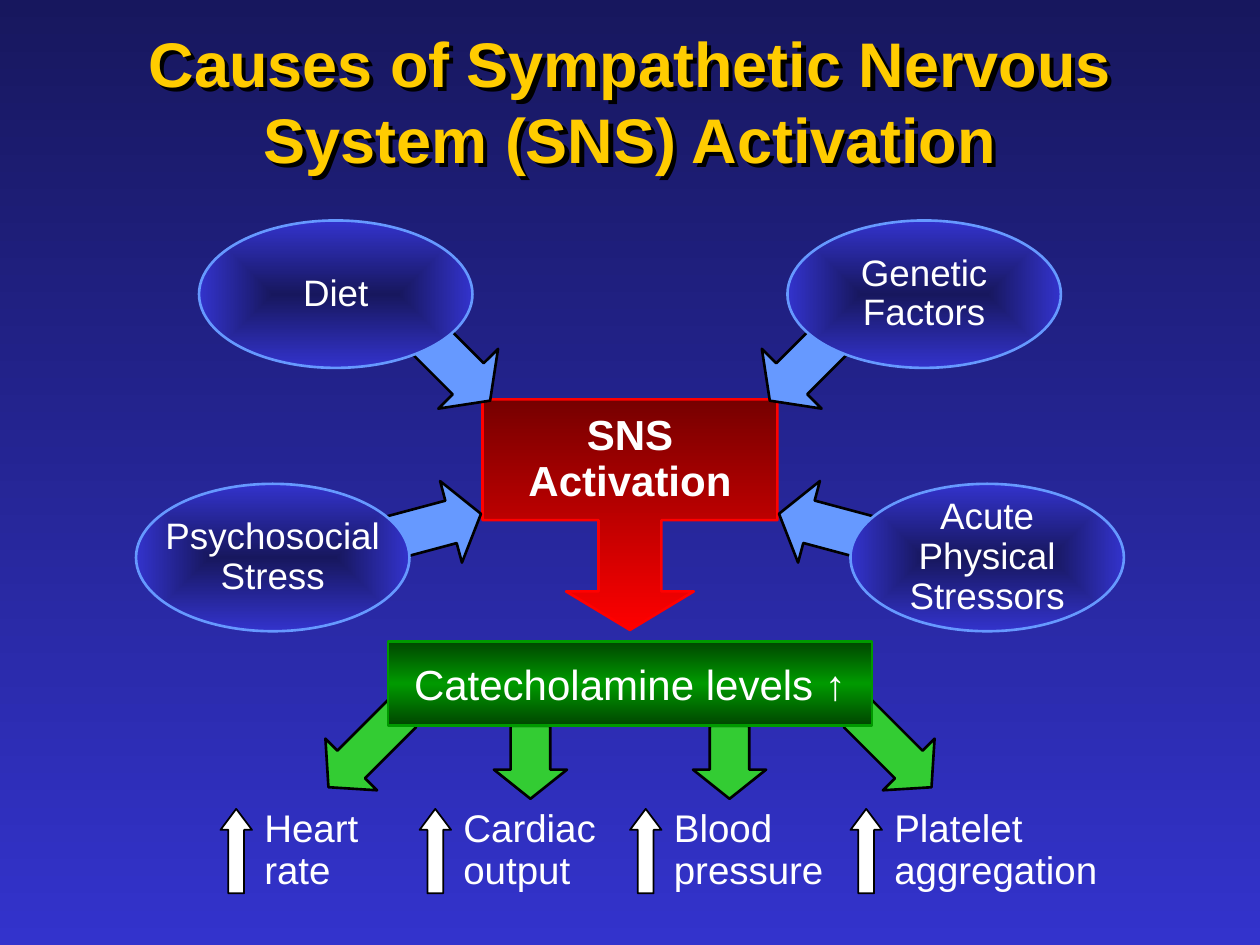
import lxml.etree
import pptx
import pptx.dml.color
import pptx.enum.shapes
import pptx.enum.text
import pptx.oxml.ns
import pptx.util

Inches = pptx.util.Inches
RGBColor = pptx.dml.color.RGBColor
SHAPE = pptx.enum.shapes.MSO_SHAPE
ALIGN = pptx.enum.text.PP_ALIGN
qn = pptx.oxml.ns.qn

NAVY = RGBColor(0x17, 0x17, 0x5E)
BLUE = RGBColor(0x33, 0x33, 0xCC)
SKY = RGBColor(0x66, 0x99, 0xFF)
GOLD = RGBColor(0xFF, 0xCC, 0x00)
MAROON = RGBColor(0x76, 0x00, 0x00)
RED = RGBColor(0xFF, 0x00, 0x00)
FOREST = RGBColor(0x00, 0x46, 0x00)
GREEN = RGBColor(0x00, 0x99, 0x00)
LIME = RGBColor(0x33, 0xCC, 0x33)
WHITE = RGBColor(0xFF, 0xFF, 0xFF)
BLACK = RGBColor(0x00, 0x00, 0x00)

TITLE_FORMAT = {"size": 36, "color": GOLD, "bold": True}
CALLOUT_FORMAT = {"size": 24, "bold": True, "spacing": 0.9}
CAUSE_FORMAT = {"size": 21, "spacing": 0.9}
LEVEL_FORMAT = {"size": 24}
EFFECT_FORMAT = {"size": 22, "spacing": 0.9, "alignment": ALIGN.LEFT}


def apply_gradient(fill, element, colors, from_center=False):
    """Fill with evenly spaced colours, top to bottom or outward from the centre."""
    fill.gradient()
    gradient = next(element.iter(qn("a:gradFill")))
    for child in list(gradient):
        gradient.remove(child)
    stops = lxml.etree.SubElement(gradient, qn("a:gsLst"))
    for index, color in enumerate(colors):
        position = 100000 * index // (len(colors) - 1)
        stop = lxml.etree.SubElement(stops, qn("a:gs"), pos=str(position))
        lxml.etree.SubElement(stop, qn("a:srgbClr"), val=str(color))
    if from_center:
        route = lxml.etree.SubElement(gradient, qn("a:path"), path="shape")
        sides = dict.fromkeys("ltrb", "50000")
        lxml.etree.SubElement(route, qn("a:fillToRect"), **sides)
    else:
        lxml.etree.SubElement(gradient, qn("a:lin"), ang="5400000", scaled="1")


def write_text(shape, lines, text_format, wrap=False):
    """Write one paragraph for each line, centred vertically in the shape."""
    frame = shape.text_frame
    frame.word_wrap = wrap
    frame.vertical_anchor = pptx.enum.text.MSO_ANCHOR.MIDDLE
    for index, line in enumerate(lines):
        paragraph = frame.add_paragraph() if index else frame.paragraphs[0]
        paragraph.alignment = text_format.get("alignment", ALIGN.CENTER)
        paragraph.line_spacing = text_format.get("spacing", 1.0)
        run = paragraph.add_run()
        run.text = line
        font_values = {
            "name": "Arial",
            "size": pptx.util.Pt(text_format["size"]),
            "bold": text_format.get("bold", False),
        }
        for name, value in font_values.items():
            setattr(run.font, name, value)
        run.font.color.rgb = text_format.get("color", WHITE)


def add_box(slide, kind, box, colors, line_color, line_width=1.5, adjustments=(), from_center=False):
    """Add an outlined preset shape with a plain or gradient fill."""
    shape = slide.shapes.add_shape(kind, *map(Inches, box))
    shape.shadow.inherit = False
    for index, value in enumerate(adjustments):
        shape.adjustments[index] = value
    if len(colors) == 1:
        shape.fill.solid()
        shape.fill.fore_color.rgb = colors[0]
    else:
        apply_gradient(shape.fill, shape._element, colors, from_center)
    shape.line.color.rgb = line_color
    shape.line.width = pptx.util.Pt(line_width)
    return shape


def add_arrow(slide, box, color, rotation, adjustments):
    """Add a black-edged block arrow, pointing down before rotation."""
    arrow = add_box(slide, SHAPE.DOWN_ARROW, box, [color], BLACK, adjustments=adjustments)
    arrow.rotation = rotation


def add_title(slide, box):
    """Add the gold title with a hard black shadow."""
    title = slide.shapes.add_textbox(*map(Inches, box))
    write_text(title, ["Causes of Sympathetic Nervous System (SNS) Activation"], TITLE_FORMAT, True)
    effects = lxml.etree.SubElement(title._element.spPr, qn("a:effectLst"))
    shadow = lxml.etree.SubElement(effects, qn("a:outerShdw"), dist="45000", dir="2700000")
    lxml.etree.SubElement(shadow, qn("a:srgbClr"), val=str(BLACK))


def add_activation(slide, box):
    """Add the red callout whose arrow leads down to the levels bar."""
    callout = add_box(slide, SHAPE.DOWN_ARROW_CALLOUT, box, [MAROON, RED], RED,
                      adjustments=(0.273, 0.277, 0.167, 0.524))
    write_text(callout, ["SNS", "Activation"], CALLOUT_FORMAT)


def add_causes(slide, box):
    """Add four ellipses with arrows aimed at the middle of the box."""
    left, top, width, height = box
    oval_width, oval_height = 2.17, 1.17
    upper, lower = top, top + height - oval_height
    right = left + width - oval_width
    causes = [
        (["Genetic", "Factors"], right - 0.5, upper, 4.96, 0.79, 45),
        (["Acute", "Physical", "Stressors"], right, lower, 5.13, 2.05, 105),
        (["Diet"], left + 0.5, upper, 2.21, 0.79, 315),
        (["Psychosocial", "Stress"], left, lower, 2.04, 2.05, 255),
    ]
    for lines, oval_left, oval_top, arrow_left, arrow_top, rotation in causes:
        arrow_box = (left + arrow_left, top + arrow_top, 0.67, 0.75)
        add_arrow(slide, arrow_box, SKY, rotation, (0.52, 0.367))
        oval_box = (oval_left, oval_top, oval_width, oval_height)
        oval = add_box(slide, SHAPE.OVAL, oval_box, [NAVY, BLUE], SKY, from_center=True)
        write_text(oval, lines, CAUSE_FORMAT)


def add_effects(slide, box):
    """Add the row of labels, each with a white up arrow."""
    left, top, _, height = box
    effects = [
        (0, 1.33, ["Heart", "rate"]),
        (1.58, 1.33, ["Cardiac", "output"]),
        (3.25, 1.48, ["Blood", "pressure"]),
        (5, 2, ["Platelet", "aggregation"]),
    ]
    for offset, label_width, lines in effects:
        label_box = (left + offset + 0.25, top, label_width, height)
        label = slide.shapes.add_textbox(*map(Inches, label_box))
        write_text(label, lines, EFFECT_FORMAT, True)
        add_box(slide, SHAPE.UP_ARROW, (left + offset, top, 0.25, height), [WHITE], BLACK, 1,
                (0.5, 0.667))


def add_levels(slide, box):
    """Add the green bar over its four outgoing arrows."""
    left, top, width, height = box
    center = left + width / 2
    for side in (1, -1):
        straight_box = (center + side * 0.79 - 0.29, top + height, 0.58, 0.58)
        add_arrow(slide, straight_box, LIME, 0, (0.542, 0.399))
        slanted_box = (center + side * 2.1 - 0.29, top + 0.45, 0.58, 0.83)
        add_arrow(slide, slanted_box, LIME, -45 * side % 360, (0.535, 0.441))
    bar = add_box(slide, SHAPE.RECTANGLE, box, [FOREST, GREEN, FOREST], GREEN)
    write_text(bar, ["Catecholamine levels ↑"], LEVEL_FORMAT)


def main():
    """Build and save the slide."""
    presentation = pptx.Presentation()
    presentation.slide_width = Inches(10)
    presentation.slide_height = Inches(7.5)
    slide = presentation.slides.add_slide(presentation.slide_layouts[6])
    apply_gradient(slide.background.fill, slide._element, [NAVY, BLUE])
    add_title(slide, (0.75, 0.17, 8.5, 1.25))
    add_activation(slide, (3.83, 3.17, 2.34, 1.83))
    add_causes(slide, (1.08, 1.75, 7.84, 3.26))
    add_effects(slide, (1.75, 6.42, 7.25, 0.67))
    add_levels(slide, (3.08, 5.09, 3.84, 0.67))
    presentation.save("out.pptx")


if __name__ == "__main__":
    main()
